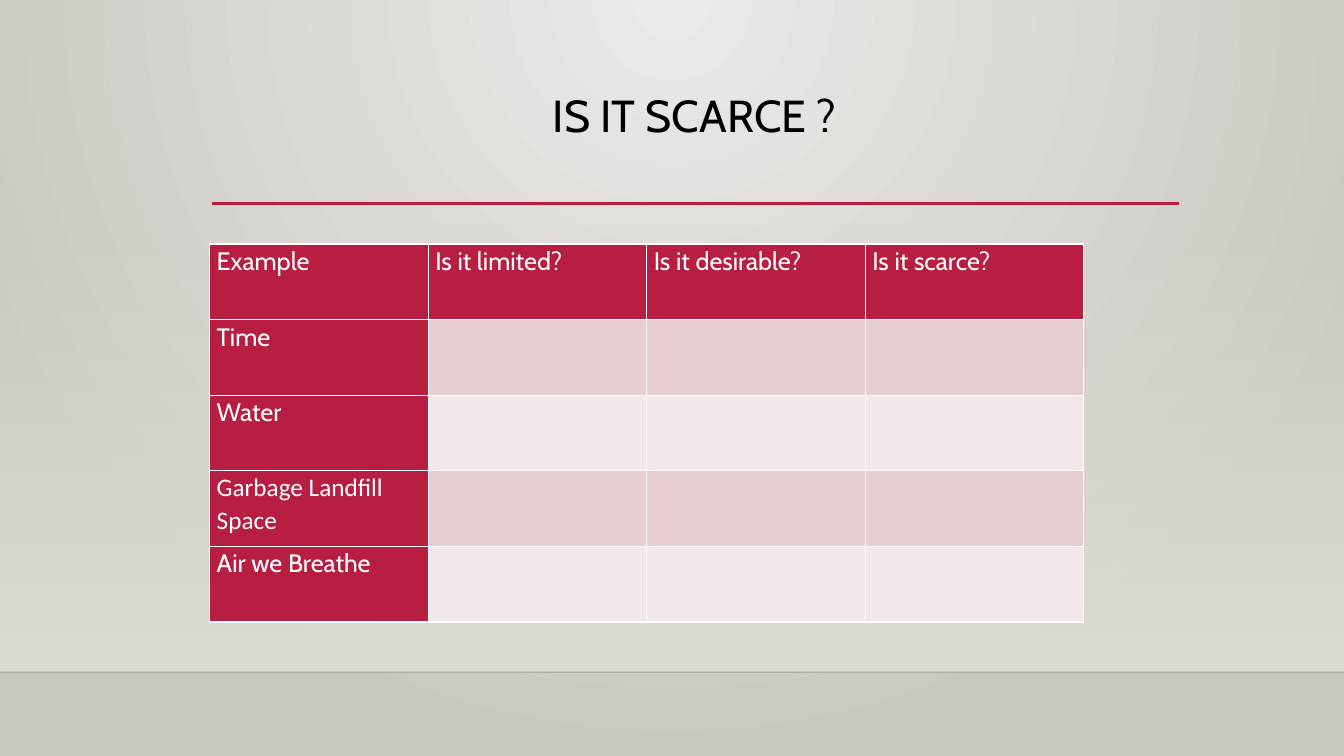
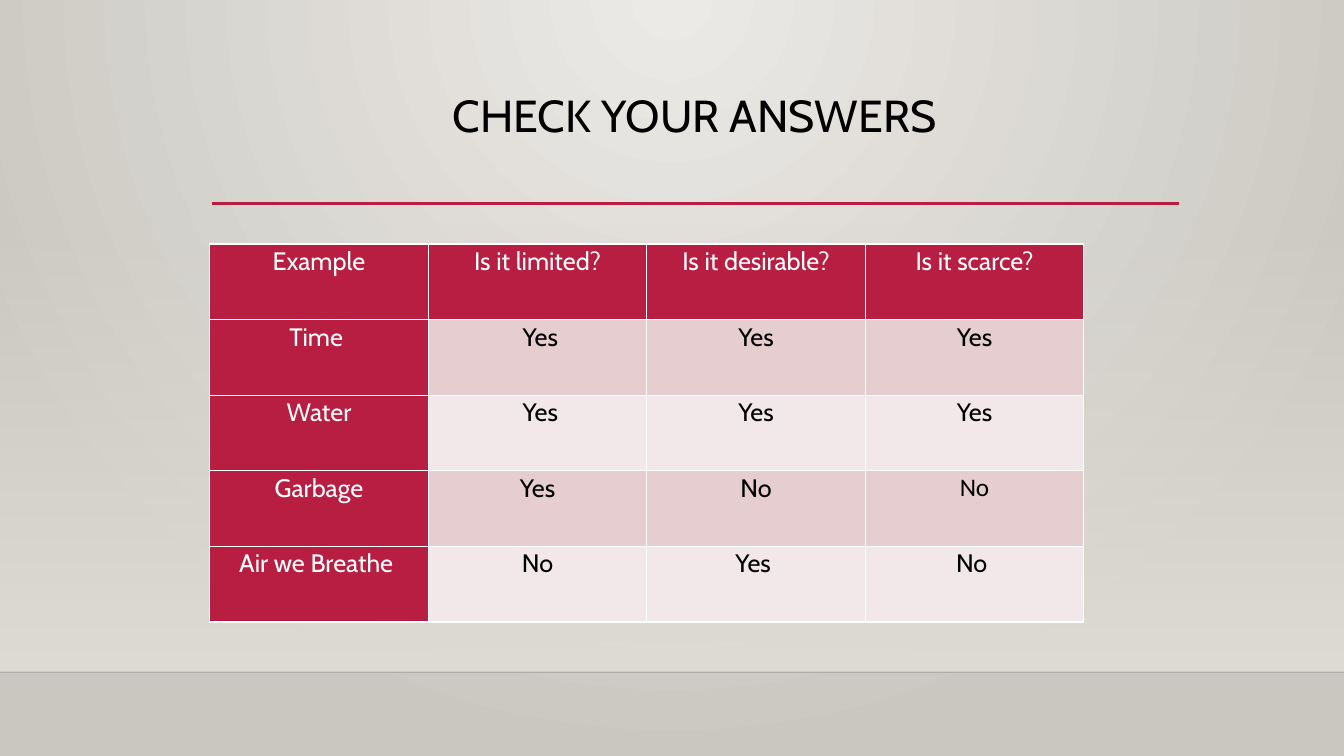
"""Build two slides on scarcity: a question table and its answers."""
from lxml import etree
from pptx import Presentation
from pptx.dml.color import RGBColor
from pptx.enum.shapes import MSO_CONNECTOR, MSO_SHAPE
from pptx.enum.text import MSO_ANCHOR, PP_ALIGN
from pptx.oxml.ns import qn
from pptx.util import Inches, Pt

LEFT, CENTER = PP_ALIGN.LEFT, PP_ALIGN.CENTER
TOP = MSO_ANCHOR.TOP
RECT, STRAIGHT = MSO_SHAPE.RECTANGLE, MSO_CONNECTOR.STRAIGHT

COLORS = {
    "accent": "B71E42", "white": "FFFFFF", "black": "000000",
    "band_dark": "E6CDCF", "band_light": "F3E8E9",
    "bg_light": "ECEAE7", "bg_dark": "CAC7C1", "wall": "DFDBD5",
}
WIDTH, HEIGHT = 13.33, 7.5
FLOOR_Y, RULE_Y = 6.67, 2.02
TITLE_BOX = (2.1, 0.88, 9.58, 1.15)
TABLE_BOX = (2.08, 2.42, 8.67, 3.75)
TITLE_FONT = {"name": "Cabin", "size": Pt(32), "bold": False}
CELL_FONT = {"name": "Cabin", "size": Pt(18), "bold": False}
CELL_MARGINS = {"margin_left": 0.07, "margin_top": 0,
                "margin_right": 0.07, "margin_bottom": 0}

HEADER = ["Example", "Is it limited?", "Is it desirable?", "Is it scarce?"]
SLIDES = [
    {
        "title": "IS IT SCARCE ?",
        "align": LEFT,
        "rows": [
            HEADER,
            ["Time", "", "", ""],
            ["Water", "", "", ""],
            ["Garbage Landfill Space", "", "", ""],
            ["Air we Breathe", "", "", ""],
        ],
        "calibri": (3, 0),
    },
    {
        "title": "CHECK YOUR ANSWERS",
        "align": CENTER,
        "rows": [
            HEADER,
            ["Time ", " Yes", "Yes", "Yes"],
            ["Water", " Yes", "Yes", "Yes"],
            ["Garbage", "Yes", "No", "No"],
            ["Air we Breathe ", "No", "Yes ", "No "],
        ],
        "calibri": (3, 3),
    },
]


def rgb(name):
    return RGBColor.from_string(COLORS[name])


def inches(box):
    return [Inches(v) for v in box]


def set_alpha(element, percent):
    color = next(element.iter(qn("a:srgbClr")))
    etree.SubElement(color, qn("a:alpha"), val=str(percent * 1000))


def set_gradient(fill, names):
    fill.gradient()
    for stop, name in zip(fill.gradient_stops, names):
        stop.color.rgb = rgb(name)


def format_text(p, font, color, align, spacing):
    p.alignment, p.line_spacing = align, spacing
    for r in p.runs:
        for key, value in font.items():
            setattr(r.font, key, value)
        r.font.color.rgb = rgb(color)


def add_line(s, x1, x2, y, color, width):
    line = s.shapes.add_connector(STRAIGHT, *inches((x1, y, x2, y)))
    line.line.color.rgb, line.line.width = rgb(color), Pt(width)
    etree.SubElement(line.element.spPr, qn("a:effectLst"))
    return line


def paint_background(layout):
    set_gradient(layout.background.fill, ("bg_light", "bg_dark"))
    grad = next(layout.element.iter(qn("a:gradFill")))
    grad.remove(grad.find(qn("a:lin")))
    circle = etree.SubElement(grad, qn("a:path"), path="circle")
    etree.SubElement(circle, qn("a:fillToRect"), l="43000", t="0", r="43000", b="100000")


def add_decor(s, layout):
    wall = s.shapes.add_shape(RECT, *inches((0, 2.2, WIDTH, FLOOR_Y - 2.2)))
    wall.shadow.inherit = False
    wall.line.fill.background()
    set_gradient(wall.fill, ("wall", "wall"))
    wall.fill.gradient_angle = 270
    set_alpha(wall.element.spPr, 0)
    floor = add_line(s, 0, WIDTH, FLOOR_Y, "black", 1)
    set_alpha(floor.element.spPr, 20)
    rule = add_line(s, 2.1, 11.69, RULE_Y, "accent", 2.5)
    for i, shape in enumerate((wall, floor, rule)):
        next(shape.element.iter(qn("p:cNvPr"))).set("id", str(100 + i))
        layout.shapes.element.insert(2 + i, shape.element)


def add_title(s, text):
    title = s.shapes.title
    title.left, title.top, title.width, title.height = inches(TITLE_BOX)
    tf = title.text_frame
    tf.text, tf.vertical_anchor = text, TOP
    format_text(tf.paragraphs[0], TITLE_FONT, "black", CENTER, 0.9)


def add_borders(cell):
    tc_pr = cell._tc.get_or_add_tcPr()
    for side in ("lnL", "lnR", "lnT", "lnB"):
        line = etree.SubElement(tc_pr, qn("a:" + side), w=str(Pt(1)))
        fill = etree.SubElement(line, qn("a:solidFill"))
        etree.SubElement(fill, qn("a:srgbClr"), val=COLORS["white"])


def add_answers(s, rows, align, calibri):
    table = s.shapes.add_table(len(rows), len(HEADER), *inches(TABLE_BOX)).table
    for i, row in enumerate(rows):
        for j, text in enumerate(row):
            cell = table.cell(i, j)
            heading = i == 0 or j == 0
            add_borders(cell)
            cell.fill.solid()
            band = "band_dark" if i % 2 else "band_light"
            cell.fill.fore_color.rgb = rgb("accent" if heading else band)
            for key, value in CELL_MARGINS.items():
                setattr(cell, key, Inches(value))
            if text:
                cell.text = text
                font = CELL_FONT | ({"name": "Calibri"} if (i, j) == calibri else {})
                color = "white" if heading else "black"
                format_text(cell.text_frame.paragraphs[0], font, color, align, 1.07)


def main():
    prs = Presentation()
    prs.slide_width, prs.slide_height = inches((WIDTH, HEIGHT))
    layout = prs.slide_layouts[5]
    paint_background(layout)
    for i, content in enumerate(SLIDES):
        s = prs.slides.add_slide(layout)
        if i == 0:
            add_decor(s, layout)
        add_title(s, content["title"])
        add_answers(s, content["rows"], content["align"], content["calibri"])
    prs.save("out.pptx")


if __name__ == "__main__":
    main()
